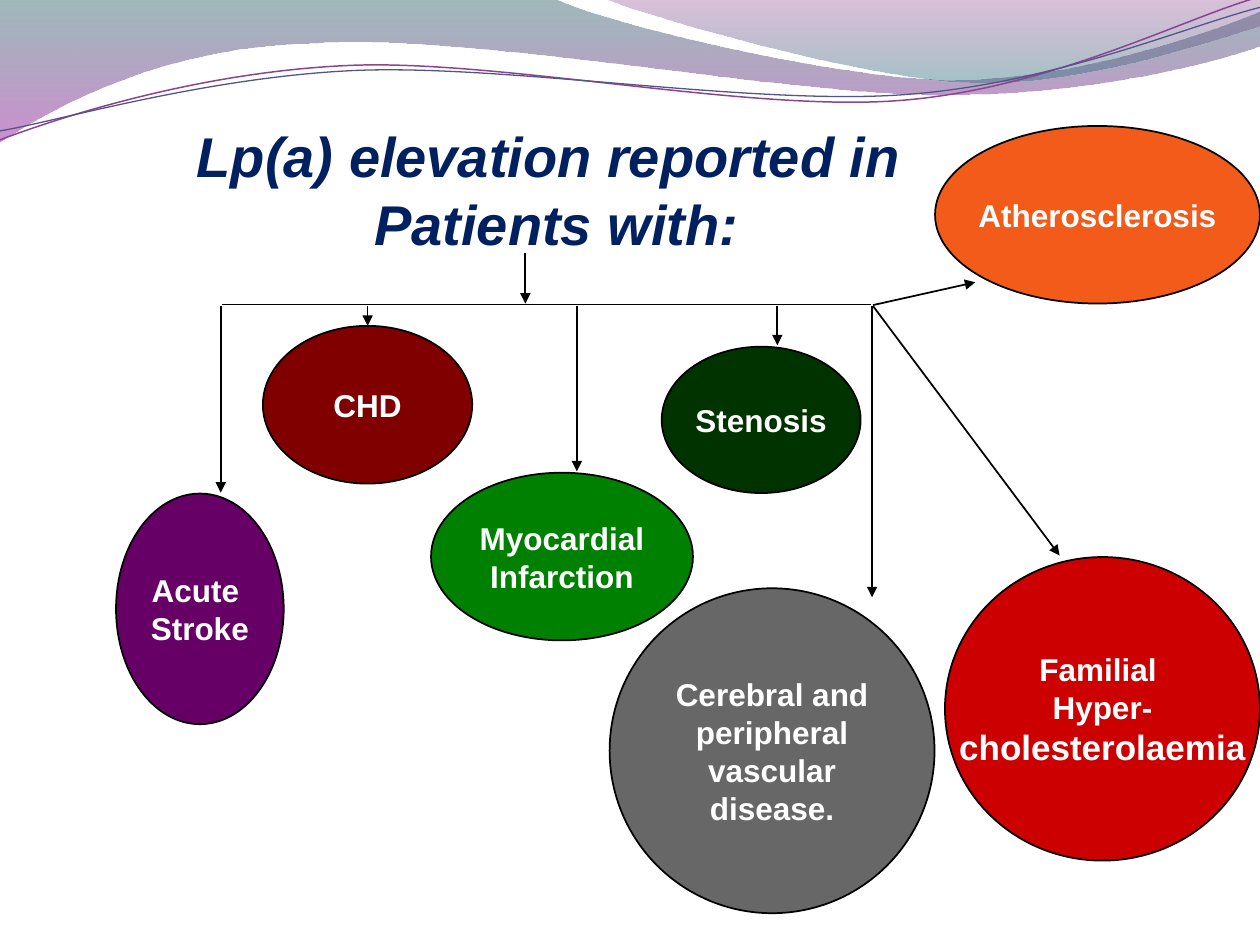
from dataclasses import dataclass

from lxml.etree import SubElement
from pptx import Presentation
from pptx.dml.color import RGBColor
from pptx.enum.shapes import MSO_CONNECTOR as Connector, MSO_SHAPE as Shape
from pptx.enum.text import MSO_ANCHOR as Anchor, MSO_AUTO_SIZE as AutoSize, PP_ALIGN as Align
from pptx.oxml.ns import qn
from pptx.util import Cm, Pt


@dataclass(frozen=True)
class Theme:
    """Colours, type sizes and line widths of the slide."""
    font: str = "Arial"
    title_size: int = 32
    label_size: int = 18
    large_size: int = 20
    title: str = "002060"
    label: str = "FFFFFF"
    outline: str = "000000"
    outline_width: float = 1
    wide_wave: tuple = (("2D6368", 45), ("A530A9", 55))
    short_wave: tuple = (("7F2F82", 30), ("2F7B82", 45))
    strands: tuple = (("8D4490", 0.85), ("53548A", 0.75))


@dataclass(frozen=True)
class Box:
    """A region in centimetres."""
    left: float
    top: float
    width: float
    height: float

    def inner(self, left, top, width, height):
        """Return the EMU frame of a part placed relative to this box."""
        return Cm(self.left + left), Cm(self.top + top), Cm(width), Cm(height)

    def point(self, x, y):
        """Return the EMU position of a point relative to this box."""
        return Cm(self.left + x), Cm(self.top + y)


THEME = Theme()

WIDE_WAVE = [
    [(0, 0)], [(11.18, -0.03)],
    [(12.09, 0.43), (16.87, 1.6), (19.25, 1.6)],
    [(21.67, 1.6), (24.33, 0.66), (25.4, 0.23)], [(25.43, 0.91)],
    [(24.97, 1.12), (22.1, 1.93), (18.95, 1.91)],
    [(15.8, 1.91), (9.7, 0.71), (6.53, 0.86)],
    [(3.28, 0.91), (1.17, 2.11), (-0.03, 2.87)],
]
SHORT_WAVE = [
    [(12.17, -0.03)], [(12.93, 0.28), (17.32, 1.57), (19.53, 1.65)],
    [(21.74, 1.75), (24.41, 0.81), (25.4, 0.53)], [(25.4, 0)],
]
STRANDS = [
    [[(0, 2.82)], [(1.22, 2.36), (4.01, 1.45), (7.04, 1.32)],
     [(10.03, 1.19), (15.06, 2.26), (18.11, 2.03)],
     [(21.16, 1.8), (23.83, 0.38), (25.35, -0.05)]],
    [[(0, 2.64)], [(1.19, 2.44), (4.17, 1.55), (7.19, 1.42)],
     [(10.24, 1.3), (15.16, 2.13), (18.21, 1.91)],
     [(21.23, 1.7), (23.9, 0.53), (25.4, 0.15)]],
]
CONDITIONS = [
    (["Acute ", "Stroke"], (0, 7.41, 3.38, 4.65), "660066"),
    (["CHD"], (2.96, 4.03, 4.22, 3.18), "800000"),
    (["Myocardial", "Infarction"], (6.35, 6.99, 5.28, 3.38), "008000"),
    (["Stenosis"], (11, 4.45, 4.01, 2.95), "003300"),
    (["Atherosclerosis"], (16.51, 0, 6.55, 3.58), "F35B1B"),
    (["Cerebral and", "peripheral", "vascular", "disease."], (9.95, 9.32, 6.55, 6.55), "676767"),
    (["Familial ", "Hyper-", "cholesterolaemia"], (16.71, 8.69, 6.35, 6.12), "CC0000"),
]
STEM = ((6.14, 0), (6.14, 1.01))
BAR = ((0.02, 1.03), (13.1, 1.03))
DROP_TOP = 1.06
DROPS = [(0, 4.82), (7.18, 4.39), (11.22, 1.85), (13.13, 6.93)]
BRANCHES = [((13.15, 1.06), (16.91, 6.09)), ((13.15, 1.04), (15.21, 0.58))]
CHD_DROP = ((2.96, 1.06), (2.96, 1.46))


def apply(target, values):
    """Set the attributes named in a dict of format values."""
    for name, value in values.items():
        setattr(target, name, value)


def write_lines(frame, lines, color, size, italic=False, last_size=None):
    """Write centred bold paragraphs in an unwrapped text frame."""
    apply(frame, {"auto_size": AutoSize.NONE, "word_wrap": False,
                  "vertical_anchor": Anchor.MIDDLE})
    for index, line in enumerate(lines):
        para = frame.paragraphs[0] if index == 0 else frame.add_paragraph()
        para.alignment = Align.CENTER
        span = para.add_run()
        span.text = line
        is_last = index == len(lines) - 1
        apply(span.font, {"name": THEME.font, "bold": True, "italic": italic,
                          "size": Pt(last_size if last_size and is_last else size)})
        span.font.color.rgb = RGBColor.from_string(color)


def style_line(line, color, width):
    """Give a line its colour and width."""
    line.color.rgb = RGBColor.from_string(color)
    line.width = Pt(width)


def add_outline(page, box, segments, closed):
    """Add a shadowless freeform whose three-point segments are cubic curves."""
    points = [box.point(x, y) for segment in segments for x, y in segment]
    builder = page.shapes.build_freeform(*points[0])
    builder.add_line_segments(points[1:], close=closed)
    outline = builder.convert_to_shape()
    outline.shadow.inherit = False
    route = next(outline.element.iter(qn("a:path")))
    steps = iter(route.findall(qn("a:lnTo")))
    for segment in segments[1:]:
        members = [next(steps) for point in segment]
        if len(members) == 3:
            curve = SubElement(route, qn("a:cubicBezTo"))
            members[0].addprevious(curve)
            for member in members:
                curve.append(member[0])
                route.remove(member)
    return outline


def draw_waves(page, box):
    """Draw the two gradient waves and the thin strands along the top."""
    for segments, colors in ((WIDE_WAVE, THEME.wide_wave), (SHORT_WAVE, THEME.short_wave)):
        wave = add_outline(page, box, segments, True)
        wave.line.fill.background()
        wave.fill.gradient()
        wave.fill.gradient_angle = 270
        for position, (stop, (color, opacity)) in enumerate(zip(wave.fill.gradient_stops, colors)):
            stop.position = position
            stop.color.rgb = RGBColor.from_string(color)
        for tone, (color, opacity) in zip(wave.element.spPr.iter(qn("a:srgbClr")), colors):
            SubElement(tone, qn("a:alpha")).set("val", str(opacity * 1000))
    for segments, (color, width) in zip(STRANDS, THEME.strands):
        strand = add_outline(page, box, segments, False)
        strand.fill.background()
        style_line(strand.line, color, width)


def draw_title(page, box):
    """Place the heading in the title placeholder, shaped as an ellipse above the waves."""
    title = page.shapes.title
    apply(title, dict(zip(("left", "top", "width", "height"),
                          box.inner(0, 0, box.width, box.height))))
    geometry = SubElement(title.element.spPr, qn("a:prstGeom"))
    geometry.set("prst", "ellipse")
    SubElement(geometry, qn("a:avLst"))
    write_lines(title.text_frame, ["Lp(a) elevation reported in ", "Patients with:"],
                THEME.title, THEME.title_size, italic=True)
    title.element.getparent().append(title.element)


def draw_conditions(page, box):
    """Draw the condition ellipses and return them by first line."""
    ellipses = {}
    for lines, frame, color in CONDITIONS:
        ellipse = page.shapes.add_shape(Shape.OVAL, *box.inner(*frame))
        ellipse.shadow.inherit = False
        ellipse.fill.solid()
        ellipse.fill.fore_color.rgb = RGBColor.from_string(color)
        style_line(ellipse.line, THEME.outline, THEME.outline_width)
        last_size = THEME.large_size if lines[-1] == "cholesterolaemia" else None
        write_lines(ellipse.text_frame, lines, THEME.label, THEME.label_size, last_size=last_size)
        ellipses[lines[0]] = ellipse
    return ellipses


def add_link(page, box, start, end, arrow=True):
    """Add a straight connector, with an arrowhead unless told otherwise."""
    link = page.shapes.add_connector(Connector.STRAIGHT, *box.point(*start), *box.point(*end))
    style_line(link.line, THEME.outline, THEME.outline_width)
    if arrow:
        line = link.element.spPr.find(qn("a:ln"))
        SubElement(line, qn("a:tailEnd")).set("type", "triangle")
    SubElement(link.element.spPr, qn("a:effectLst"))
    return link


def draw_branches(page, box, ellipses):
    """Draw the stem, the bar and the arrows to the conditions."""
    add_link(page, box, *STEM)
    add_link(page, box, *BAR, arrow=False)
    drops = [((x, DROP_TOP), (x, bottom)) for x, bottom in DROPS]
    for start, end in [*drops, *BRANCHES]:
        add_link(page, box, start, end)
    add_link(page, box, *CHD_DROP).end_connect(ellipses["CHD"], 0)


def main():
    """Build the slide and save it."""
    deck = Presentation()
    apply(deck, {"slide_width": Cm(25.4), "slide_height": Cm(19.05)})
    page = deck.slides.add_slide(deck.slide_layouts[5])
    draw_waves(page, Box(0, 0, 25.4, 2.9))
    draw_title(page, Box(3.18, 1.27, 16.08, 5.08))
    ellipses = draw_conditions(page, Box(2.34, 2.54, 23.06, 15.87))
    draw_branches(page, Box(4.45, 5.11, 16.91, 6.93), ellipses)
    deck.save("out.pptx")


if __name__ == "__main__":
    main()
